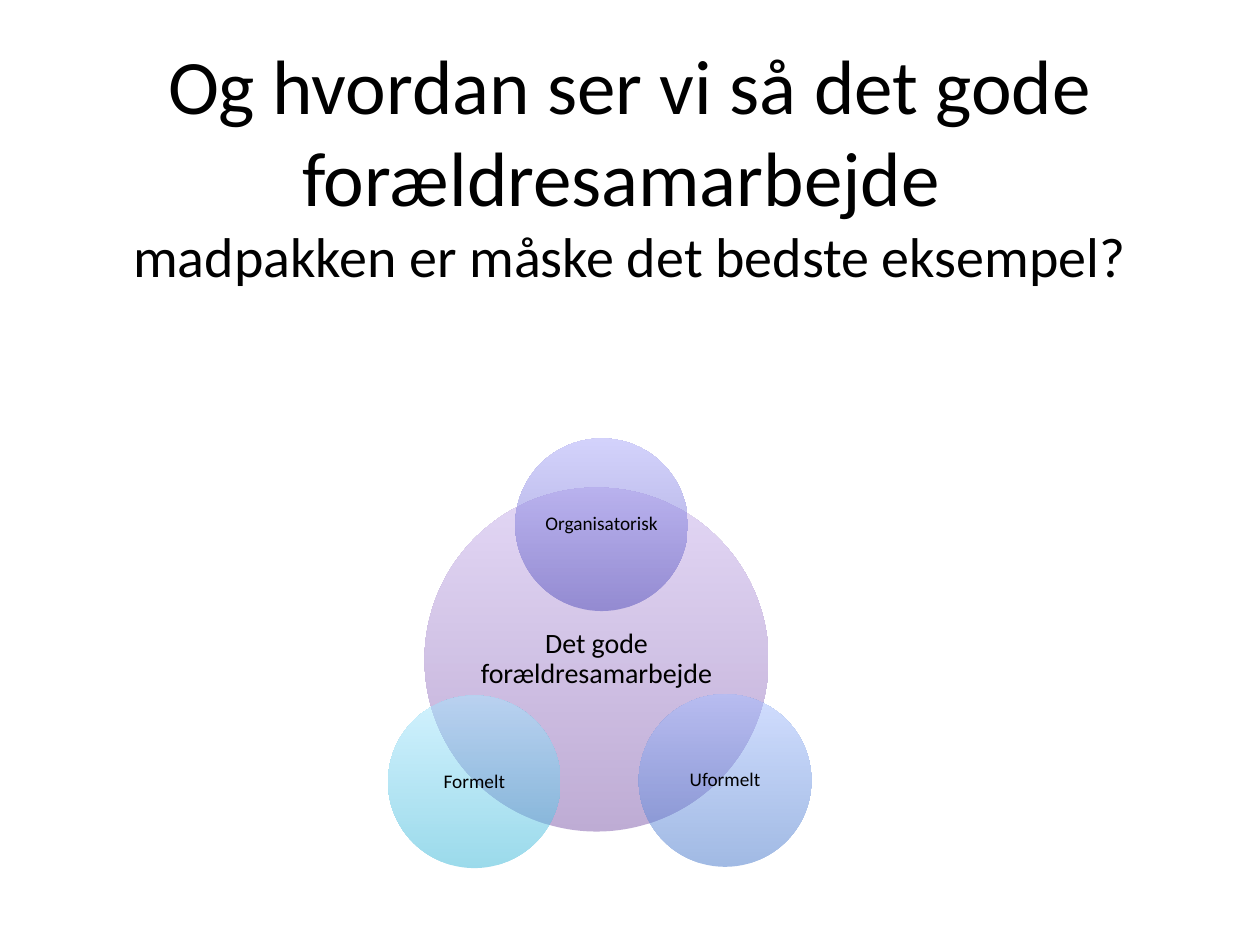
from lxml.etree import SubElement
from pptx import Presentation
from pptx.dml.color import RGBColor
from pptx.enum.shapes import MSO_SHAPE
from pptx.enum.text import MSO_ANCHOR, PP_ALIGN
from pptx.oxml.ns import qn
from pptx.util import Inches, Pt

FONT = "Calibri"
BLACK = RGBColor(0x00, 0x00, 0x00)
PURPLE = (RGBColor(0x7F, 0x5B, 0xAB), RGBColor(0xC8, 0xB0, 0xED))
VIOLET = (RGBColor(0x53, 0x4F, 0xBB), RGBColor(0xA9, 0xA7, 0xF9))
BLUE = (RGBColor(0x44, 0x76, 0xCA), RGBColor(0xA4, 0xBD, 0xFF))
CYAN = (RGBColor(0x39, 0xB7, 0xD8), RGBColor(0xA7, 0xE6, 0xFF))

CORE_SIZE = 2.73
SATELLITE_SIZE = 1.37
SATELLITES = [
    ("Organisatorisk", 1.01, 0, VIOLET),
    ("Uformelt", 1.99, 2.03, BLUE),
    ("Formelt", 0, 2.04, CYAN),
]


def style_paragraph(paragraph, size):
    paragraph.alignment = PP_ALIGN.CENTER
    paragraph.font.name = FONT
    paragraph.font.size = Pt(size)
    paragraph.font.color.rgb = BLACK


def add_title(slide, left, top, width, height):
    title = slide.shapes.add_textbox(
        Inches(left), Inches(top), Inches(width), Inches(height))
    frame = title.text_frame
    frame.word_wrap = True
    frame.vertical_anchor = MSO_ANCHOR.MIDDLE
    heading = frame.paragraphs[0]
    style_paragraph(heading, 44)
    heading.add_run().text = "Og hvordan ser vi så det gode forældresamarbejde "
    heading.add_line_break()
    subheading = heading.add_run()
    subheading.text = "madpakken er måske det bedste eksempel?"
    subheading.font.size = Pt(32)


def fill_translucent(circle, colors):
    circle.fill.gradient()
    circle.fill.gradient_angle = 90
    for stop, color, position in zip(circle.fill.gradient_stops, colors, (0, 1)):
        stop.color.rgb = color
        stop.position = position
    for color_element in circle.fill._xPr.iter(qn("a:srgbClr")):
        SubElement(color_element, qn("a:alpha"), val="50000")


def add_circle(group, label, left, top, diameter, colors, size):
    circle = group.shapes.add_shape(
        MSO_SHAPE.OVAL, Inches(left), Inches(top), Inches(diameter), Inches(diameter))
    circle.shadow.inherit = False
    fill_translucent(circle, colors)
    circle.line.fill.background()
    frame = circle.text_frame
    frame.word_wrap = True
    frame.vertical_anchor = MSO_ANCHOR.MIDDLE
    frame.margin_left = frame.margin_right = Inches(0.02)
    frame.margin_top = frame.margin_bottom = Inches(0.02)
    frame.text = label
    paragraph = frame.paragraphs[0]
    style_paragraph(paragraph, size)
    paragraph.line_spacing = 0.9


def add_venn(slide, left, top):
    venn = slide.shapes.add_group_shape()
    add_circle(venn, "Det gode forældresamarbejde", left + 0.29, top + 0.39,
               CORE_SIZE, PURPLE, 16)
    for label, dx, dy, colors in SATELLITES:
        add_circle(venn, label, left + dx, top + dy, SATELLITE_SIZE, colors, 11)


def main():
    presentation = Presentation()
    presentation.slide_width = Inches(10)
    presentation.slide_height = Inches(7.5)
    slide = presentation.slides.add_slide(presentation.slide_layouts[6])
    add_title(slide, 0.75, -0.5, 8.5, 3.59)
    add_venn(slide, 3.08, 3.48)
    presentation.save("out.pptx")


if __name__ == "__main__":
    main()
